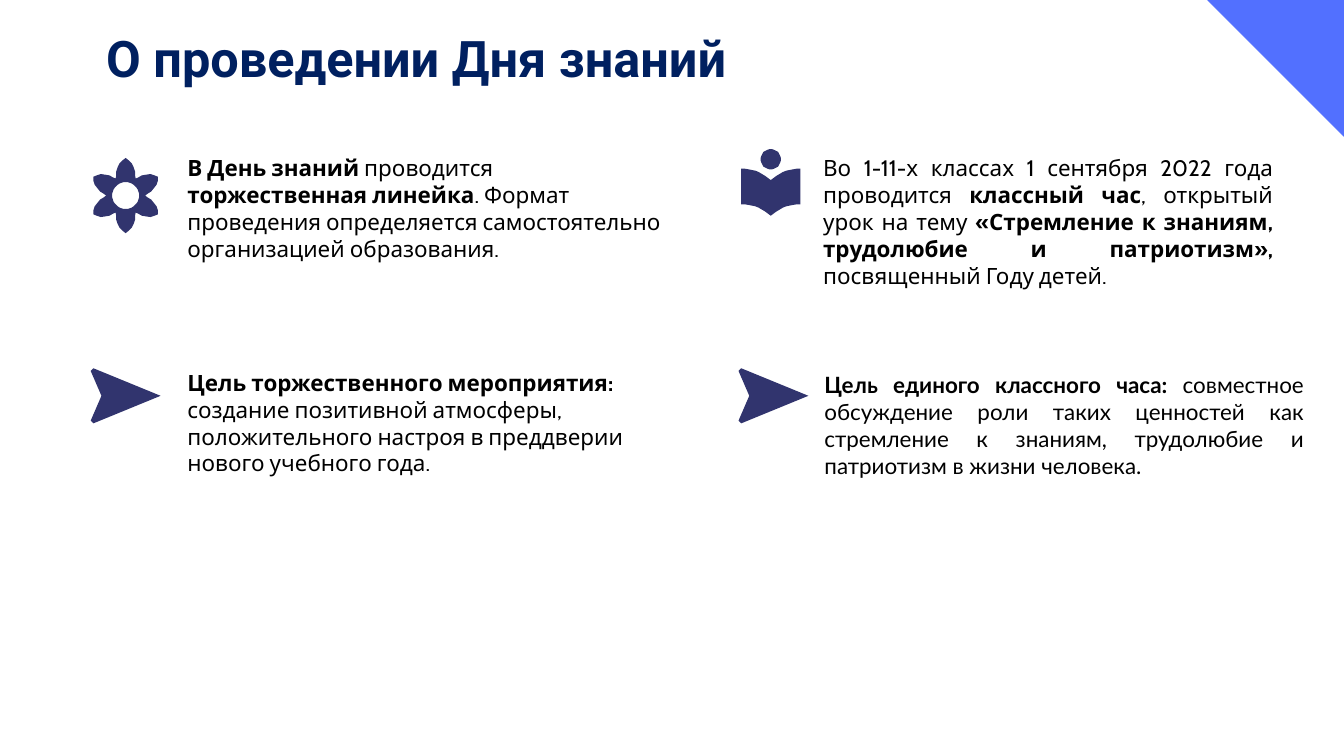
"""Builds the Knowledge Day slide: a title and four notes marked with icons."""
from math import cos, pi, sin

from pptx import Presentation
from pptx.dml.color import RGBColor
from pptx.enum.text import MSO_ANCHOR, MSO_AUTO_SIZE, PP_ALIGN
from pptx.util import Pt

PX = 9144
WIDTH, HEIGHT = 2000, 1125

BLACK = RGBColor(0x00, 0x00, 0x00)
NAVY = RGBColor(0x00, 0x20, 0x60)
INDIGO = RGBColor(0x31, 0x34, 0x6E)
BLUE = RGBColor(0x52, 0x70, 0xFF)

LEFT, JUSTIFY = PP_ALIGN.LEFT, PP_ALIGN.JUSTIFY
TOP = MSO_ANCHOR.TOP
GROW = MSO_AUTO_SIZE.SHAPE_TO_FIT_TEXT

TITLE = "О проведении Дня знаний"
NOTES = [
    ((269, 225, 731, 131), "Cabin", LEFT, [
        ("В День знаний ", True),
        ("проводится ", False),
        ("торжественная линейка", True),
        (". Формат проведения определяется самостоятельно организацией образования.", False),
    ]),
    ((1215, 225, 689, 212), "Cabin", JUSTIFY, [
        ("Во 1-11-х классах 1 сентября 2022 года проводится ", False),
        ("классный час", True),
        (", открытый урок на тему ", False),
        ("«Стремление к знаниям, трудолюбие и патриотизм», ", True),
        ("посвященный Году детей.", False),
    ]),
    ((269, 544, 731, 172), "Cabin", LEFT, [
        ("Цель торжественного мероприятия: ", True),
        ("создание позитивной атмосферы, положительного настроя в преддверии "
         "нового учебного года.", False),
    ]),
    ((1217, 548, 733, 212), "Lato", JUSTIFY, [
        ("Цель единого классного часа: ", True),
        ("совместное обсуждение роли таких ценностей как стремление к знаниям, "
         "трудолюбие и патриотизм в жизни человека.", False),
    ]),
]

FLOWER_CENTER, FLOWER_HOLE, PETALS = (187, 291), 20, 6
PETAL_EDGE = [(15, -25), (14, -30), (14, -36), (12, -42), (9, -48), (5, -52)]
PETAL_TIP = (0, -56)
BOOK_X, HEAD_Y, HEAD_RADIUS, PAGE_HEIGHT = 1147, 237, 15, 53
PAGE_EDGE = [(0, 268), (4, 265), (8, 262), (13, 259), (18, 256),
             (23, 254), (28, 253), (33, 252), (39, 251), (44, 251)]
ARROW = [(0, 78), (16, 41), (0, 4), (4, 0), (104, 41), (4, 82)]
ARROW_LEFTS, ARROW_TOP = (135, 1099), 548
CORNER = [(1797, 0), (WIDTH, 0), (WIDTH, 203)]


def circle(center, radius, steps=40):
    angles = [-2 * pi * step / steps for step in range(steps)]
    return [(center[0] + radius * cos(a), center[1] + radius * sin(a)) for a in angles]


def flower():
    petal = [(-x, y) for x, y in PETAL_EDGE] + [PETAL_TIP] + PETAL_EDGE[::-1]
    outline = []
    for number in range(PETALS):
        turn = 2 * pi * number / PETALS
        outline += [(FLOWER_CENTER[0] + x * cos(turn) - y * sin(turn),
                     FLOWER_CENTER[1] + x * sin(turn) + y * cos(turn)) for x, y in petal]
    return [outline, circle(FLOWER_CENTER, FLOWER_HOLE)]


def book():
    top = [(BOOK_X - x, y) for x, y in PAGE_EDGE[:0:-1]]
    top += [(BOOK_X + x, y) for x, y in PAGE_EDGE]
    bottom = [(x, y + PAGE_HEIGHT) for x, y in reversed(top)]
    return [circle((BOOK_X, HEAD_Y), HEAD_RADIUS), top + bottom]


def add_outline(slide, contours, color, edged=False):
    builder = slide.shapes.build_freeform(*contours[0][0], scale=PX)
    for index, points in enumerate(contours):
        if index:
            builder.move_to(*points[0])
        builder.add_line_segments(points[1:], close=True)
    shape = builder.convert_to_shape()
    shape.shadow.inherit = False
    shape.fill.solid()
    shape.fill.fore_color.rgb = color
    if edged:
        shape.line.color.rgb = color
        shape.line.width = Pt(0.75)
    else:
        shape.line.fill.background()


def add_text(slide, box, runs, font, size, color, align=LEFT, insets=(10, 5, 10, 5)):
    frame = slide.shapes.add_textbox(*(value * PX for value in box)).text_frame
    frame.word_wrap = True
    frame.auto_size = GROW
    frame.vertical_anchor = TOP
    (frame.margin_left, frame.margin_top,
     frame.margin_right, frame.margin_bottom) = (value * PX for value in insets)
    paragraph = frame.paragraphs[0]
    paragraph.alignment = align
    for text, bold in runs:
        run = paragraph.add_run()
        run.text = text
        run.font.name = font
        run.font.size = Pt(size)
        run.font.bold = bold
        run.font.color.rgb = color


def main():
    deck = Presentation()
    deck.slide_width, deck.slide_height = WIDTH * PX, HEIGHT * PX
    slide = deck.slides.add_slide(deck.slide_layouts[6])
    add_text(slide, (158, 38, 1349, 153), [(TITLE, True)], "Roboto", 54, NAVY,
             insets=(0, 2, 0, 0))
    add_outline(slide, flower(), INDIGO)
    add_outline(slide, book(), INDIGO)
    for left in ARROW_LEFTS:
        add_outline(slide, [[(left + x, ARROW_TOP + y) for x, y in ARROW]], INDIGO)
    add_outline(slide, [CORNER], BLUE, edged=True)
    for box, font, align, runs in NOTES:
        add_text(slide, box, runs, font, 24, BLACK, align)
    deck.save("out.pptx")


if __name__ == "__main__":
    main()
